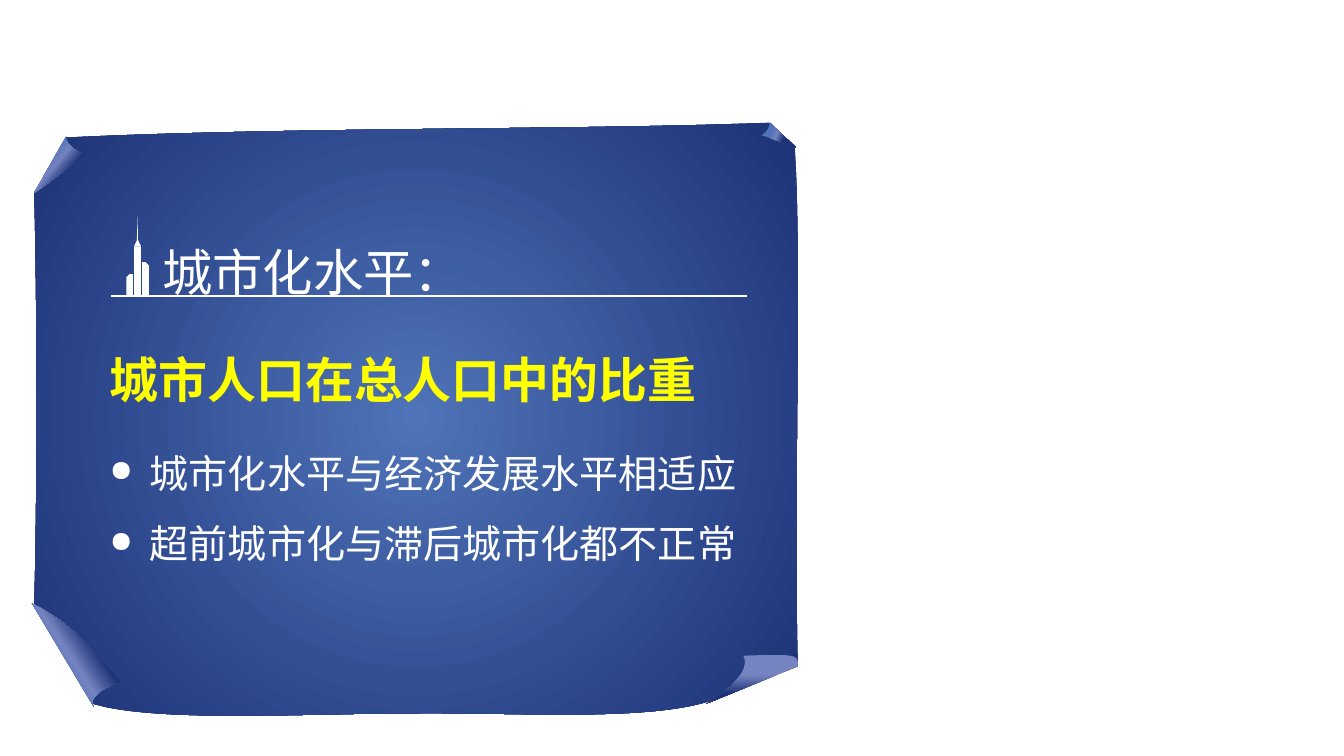
from dataclasses import dataclass

from lxml import etree
from pptx import Presentation
from pptx.dml.color import RGBColor
from pptx.enum.shapes import MSO_CONNECTOR, MSO_SHAPE
from pptx.enum.text import MSO_AUTO_SIZE
from pptx.oxml import parse_xml
from pptx.oxml.ns import nsdecls, qn
from pptx.util import Inches, Pt

RECTANGLE = MSO_SHAPE.RECTANGLE
TRIANGLE = MSO_SHAPE.ISOSCELES_TRIANGLE
SNIPPED = MSO_SHAPE.SNIP_1_RECTANGLE
GROW = MSO_AUTO_SIZE.SHAPE_TO_FIT_TEXT
STRAIGHT = MSO_CONNECTOR.STRAIGHT

COLUMNS, ROWS = 126, 70.9
CELL = Inches(0.1)
BULLET_INDENT = 3.75
FONT = "Noto Sans CJK SC"
COLORS = {
    "light": "4F73B8",
    "curl": "7583C0",
    "dark": "1D3277",
    "white": "FFFFFF",
    "yellow": "FFFF00",
}
FOLD_STOPS = ((30, "light"), (46, "curl"), (66, "dark"))

Point = tuple[float, float]


@dataclass(frozen=True)
class Outline:
    """Closed outline: a segment of one point is straight, of three a Bézier curve.

    Without an angle the gradient is radial.
    """
    start: Point
    segments: tuple[tuple[Point, ...], ...]
    stops: tuple[tuple[int, str], ...] = FOLD_STOPS
    angle: int | None = None


@dataclass(frozen=True)
class Building:
    preset: MSO_SHAPE
    left: float
    top: float
    width: float
    height: float
    mirrored: bool = False


@dataclass(frozen=True)
class Line:
    text: str
    size: float
    color: str
    bold: bool = False
    bullet: bool = False
    space_before: float = 0


SCROLL = (
    Outline((6.2, 12.9), (
        ((27.5, 11.9), (55.9, 12.2), (72.2, 11.5)),
        ((74.5, 13.7),),
        ((75.2, 23.4), (74.4, 47.1), (74.8, 62.5)),
        ((66.7, 65.7),),
        ((60.7, 67.7), (48.4, 66.8), (38.7, 66.9)),
        ((29.1, 66.9), (14.6, 67.8), (8.7, 66)),
        ((3.2, 56.9),),
        ((3.5, 47), (3.5, 28.6), (3.2, 18.1)),
    ), ((0, "light"), (100, "dark"))),
    Outline((6.2, 12.8), (
        ((6, 13.2), (7, 14.3), (8, 14.5)),
        ((6.3, 15.7), (4.9, 17), (3.2, 18.1)),
    ), angle=40),
    Outline((8.8, 66.3), (
        ((8.3, 65.6), (9.3, 64.6), (11.3, 64)),
        ((8.7, 60.8), (6.6, 58.4), (3, 56.6)),
    ), angle=327),
    Outline((66.2, 66), (
        ((66.9, 65.8), (70.6, 63.2), (69.7, 61.5)),
        ((74.7, 61.3), (74.9, 61.4), (74.8, 62.5)),
    ), ((0, "curl"), (40, "curl"), (80, "dark")), angle=90),
    Outline((72.1, 11.5), (
        ((72.3, 11.7), (71.9, 12.4), (71.4, 12.7)),
        ((72.5, 13), (73.5, 13.5), (74.6, 13.8)),
    ), angle=23),
)

SKYLINE = (
    Building(SNIPPED, 13.32, 24.6, 0.65, 3.15),
    Building(RECTANGLE, 12.57, 23.1, 0.65, 4.65),
    Building(SNIPPED, 11.85, 25.7, 0.62, 2.05, mirrored=True),
    Building(TRIANGLE, 12.57, 22.4, 0.65, 0.7),
    Building(TRIANGLE, 12.84, 20.2, 0.1, 2.3),
)

HEADING = (Line("城市化水平：", 34, "white"),)
STATEMENTS = (
    Line("城市人口在总人口中的比重", 33, "yellow", bold=True),
    Line("城市化水平与经济发展水平相适应", 26.4, "white", bullet=True, space_before=12),
    Line("超前城市化与滞后城市化都不正常", 26.4, "white", bullet=True),
)


def cells(count: float) -> int:
    return round(count * CELL)


def rgb(name: str) -> RGBColor:
    return RGBColor.from_string(COLORS[name])


def set_gradient(shape, outline: Outline) -> None:
    stops = "".join(
        f'<a:gs pos="{position * 1000}"><a:srgbClr val="{COLORS[color]}"/></a:gs>'
        for position, color in outline.stops)
    if outline.angle is None:
        direction = ('<a:path path="circle"><a:fillToRect l="50000" t="50000" '
                     'r="50000" b="50000"/></a:path>')
    else:
        direction = f'<a:lin ang="{outline.angle * 60000}" scaled="0"/>'
    gradient = parse_xml(f'<a:gradFill {nsdecls("a")} rotWithShape="1">'
                         f'<a:gsLst>{stops}</a:gsLst>{direction}</a:gradFill>')
    shape.fill.background()
    properties = shape._element.spPr
    properties.replace(properties.find(qn("a:noFill")), gradient)


def bend_segments(shape, outline: Outline) -> None:
    """Turn the straight segments that have control points into Bézier curves."""
    sides = list(shape._element.spPr.iter(qn("a:lnTo")))
    for side, segment in zip(sides, outline.segments):
        if len(segment) == 1:
            continue
        side.clear()
        side.tag = qn("a:cubicBezTo")
        for x, y in segment:
            point = etree.SubElement(side, qn("a:pt"))
            point.set("x", str(cells(x) - shape.left))
            point.set("y", str(cells(y) - shape.top))


def draw_outline(shapes, outline: Outline) -> None:
    corners = [outline.start, *(segment[-1] for segment in outline.segments)]
    (left, top), *rest = [(cells(x), cells(y)) for x, y in corners]
    builder = shapes.build_freeform(left, top)
    builder.add_line_segments(rest, close=True)
    shape = builder.convert_to_shape()
    bend_segments(shape, outline)
    shape.shadow.inherit = False
    shape.line.fill.background()
    set_gradient(shape, outline)


def draw_building(shapes, building: Building) -> None:
    shape = shapes.add_shape(building.preset, cells(building.left), cells(building.top),
                             cells(building.width), cells(building.height))
    shape.shadow.inherit = False
    shape.fill.solid()
    shape.fill.fore_color.rgb = rgb("white")
    shape.line.fill.background()
    if building.preset == SNIPPED:
        shape.adjustments[0] = 0.5
    if building.mirrored:
        shape._element.spPr.find(qn("a:xfrm")).set("flipH", "1")


def draw_rule(shapes, left: float, right: float, top: float) -> None:
    rule = shapes.add_connector(STRAIGHT, cells(left), cells(top), cells(right), cells(top))
    rule.line.color.rgb = rgb("white")
    rule.line.width = Pt(1.5)
    etree.SubElement(rule._element.spPr, qn("a:effectLst"))


def write_line(paragraph, line: Line) -> None:
    if line.bullet:
        properties = paragraph._p.get_or_add_pPr()
        properties.set("marL", str(cells(BULLET_INDENT)))
        properties.set("indent", str(-cells(BULLET_INDENT)))
        etree.SubElement(properties, qn("a:buSzPct")).set("val", "75000")
        etree.SubElement(properties, qn("a:buChar")).set("char", "●")
        paragraph.line_spacing = 1.5
    if line.space_before:
        paragraph.space_before = Pt(line.space_before)
    run = paragraph.add_run()
    run.text = line.text
    for name, value in {"name": FONT, "size": Pt(line.size), "bold": line.bold}.items():
        setattr(run.font, name, value)
    run.font.color.rgb = rgb(line.color)
    etree.SubElement(run._r.get_or_add_rPr(), qn("a:ea")).set("typeface", FONT)


def draw_text(shapes, left: float, top: float, width: float, height: float,
              lines: tuple[Line, ...], wrap: bool) -> None:
    frame = shapes.add_textbox(cells(left), cells(top), cells(width), cells(height)).text_frame
    for name, value in {"word_wrap": wrap, "auto_size": GROW}.items():
        setattr(frame, name, value)
    for index, line in enumerate(lines):
        write_line(frame.add_paragraph() if index else frame.paragraphs[0], line)


def main() -> None:
    presentation = Presentation()
    presentation.slide_width, presentation.slide_height = cells(COLUMNS), cells(ROWS)
    slide = presentation.slides.add_slide(presentation.slide_layouts[6])
    scroll = slide.shapes.add_group_shape().shapes
    for outline in SCROLL:
        draw_outline(scroll, outline)
    header = slide.shapes.add_group_shape().shapes
    for building in SKYLINE:
        draw_building(header, building)
    draw_text(header, 14.24, 22.1, 30.3, 6.7, HEADING, wrap=False)
    draw_rule(header, 10.4, 70, 27.73)
    draw_text(slide.shapes, 9.3, 32.3, 61.8, 21.6, STATEMENTS, wrap=True)
    presentation.save("out.pptx")


if __name__ == "__main__":
    main()
